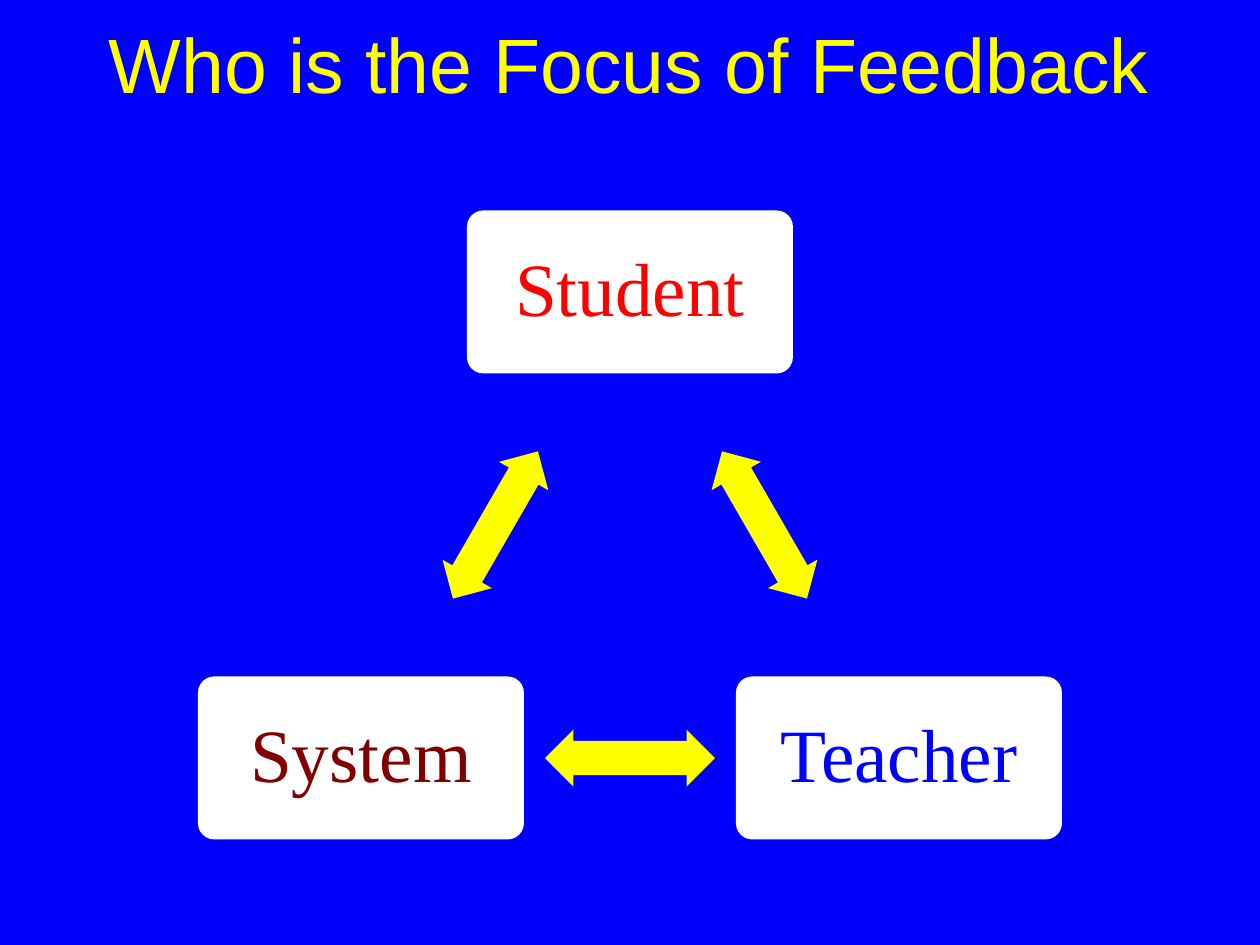
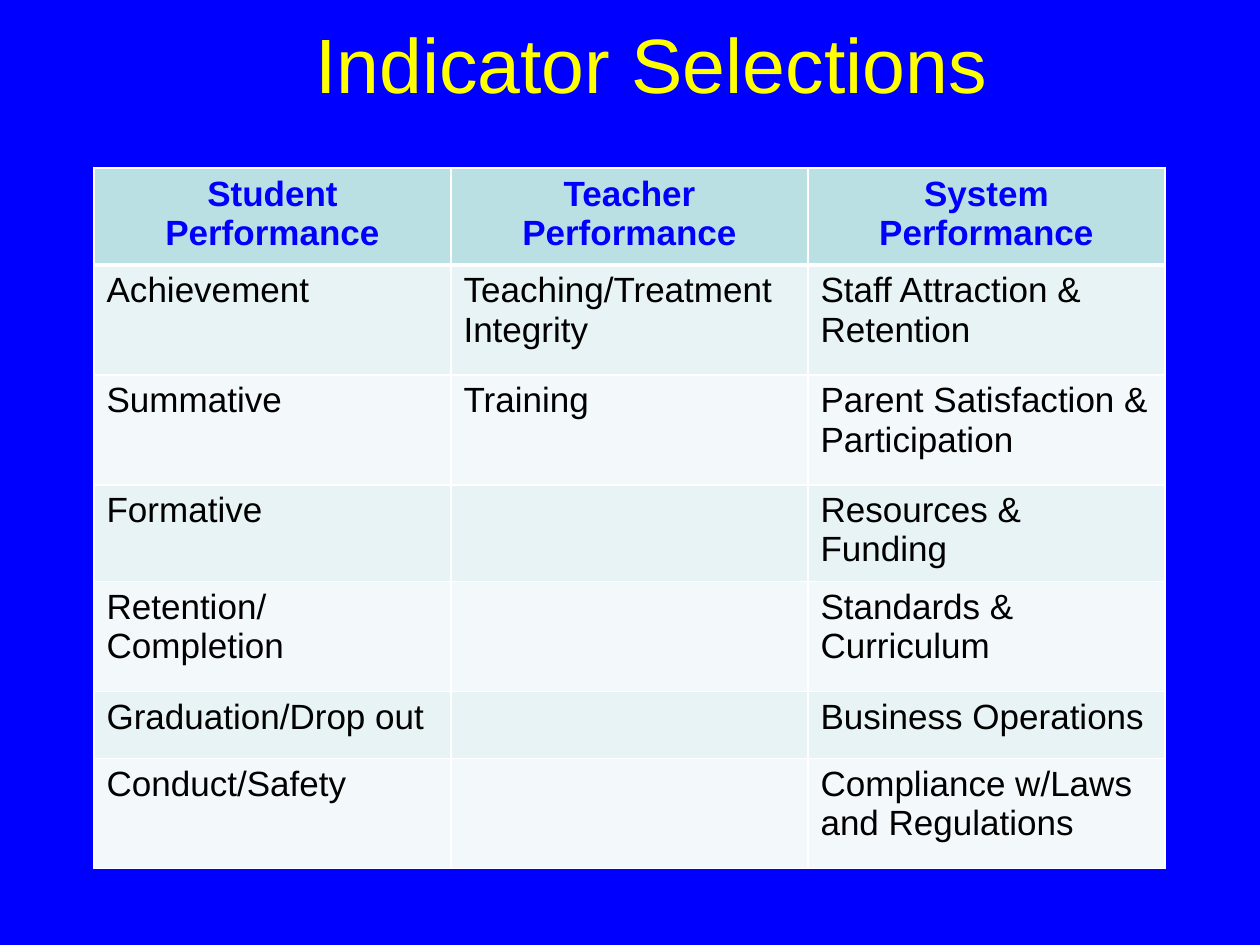
"""Build two slides on feedback focus and indicator selection."""
import itertools
import math
from typing import NamedTuple

import pptx
import pptx.dml.color
import pptx.enum.shapes
import pptx.enum.text
import pptx.oxml
import pptx.oxml.ns
import pptx.util

COLORS = {
    "background": "0000FF",
    "title": "FFFF00",
    "box": "FFFFFF",
    "arrow": "FFFF00",
    "student": "FF0000",
    "teacher": "0000FF",
    "system": "800000",
    "border": "FFFFFF",
    "header": "BBE0E3",
    "header_text": "0000FF",
    "odd_row": "E7F3F4",
    "even_row": "F3F9FA",
    "body_text": "000000",
}
PX_PER_INCH = 126
BOX_W, BOX_H = 326, 163
ARROW_W, ARROW_H = 170, 57
PP_ALIGN = pptx.enum.text.PP_ALIGN
MIDDLE = pptx.enum.text.MSO_ANCHOR.MIDDLE
MSO_SHAPE = pptx.enum.shapes.MSO_SHAPE


class Focus(NamedTuple):
    """A party that receives feedback, placed by its centre."""

    label: str
    color: str
    x: int
    y: int


class Row(NamedTuple):
    """A table row with its height."""

    height: int
    cells: tuple[str, str, str]


FOCUSES = (
    Focus("Student", "student", 630, 292),
    Focus("Teacher", "teacher", 899, 758),
    Focus("System", "system", 361, 758),
)
ROWS = (
    Row(97, ("Student Performance", "Teacher Performance", "System Performance")),
    Row(110, ("Achievement", "Teaching/Treatment Integrity", "Staff Attraction & Retention")),
    Row(110, ("Summative", "Training", "Parent Satisfaction & Participation")),
    Row(96, ("Formative", "", "Resources & Funding")),
    Row(110, ("Retention/Completion", "", "Standards & Curriculum")),
    Row(67, ("Graduation/Drop out", "", "Business Operations")),
    Row(110, ("Conduct/Safety", "", "Compliance w/Laws and Regulations")),
)


def px(n: float) -> pptx.util.Emu:
    """Turn px into EMU."""
    return pptx.util.Emu(round(n * 914400 / PX_PER_INCH))


def rgb(name: str) -> pptx.dml.color.RGBColor:
    """Look up a named colour."""
    return pptx.dml.color.RGBColor.from_string(COLORS[name])


def write(tf, text: str, size: int, color: str, font: str = "Arial",
          align=PP_ALIGN.CENTER, bold: bool = False) -> None:
    """Set and format the text of a frame."""
    tf.text = text
    tf.word_wrap = True
    for p in tf.paragraphs:
        p.alignment = align
        for r in p.runs:
            r.font.size = pptx.util.Pt(size)
            r.font.name = font
            r.font.bold = bold
            r.font.color.rgb = rgb(color)


def add_slide(prs, title: str, left: int):
    """Add a coloured slide with its title."""
    s = prs.slides.add_slide(prs.slide_layouts[6])
    s.background.fill.solid()
    s.background.fill.fore_color.rgb = rgb("background")
    tf = s.shapes.add_textbox(px(left), 0, px(1071), px(126)).text_frame
    write(tf, title, 44, "title")
    tf.vertical_anchor = MIDDLE
    return s


def add_centred(s, kind, x: float, y: float, w: int, h: int, color: str):
    """Add a plain filled shape around a centre."""
    sp = s.shapes.add_shape(kind, px(x - w / 2), px(y - h / 2), px(w), px(h))
    sp.shadow.inherit = False
    sp.fill.solid()
    sp.fill.fore_color.rgb = rgb(color)
    sp.line.fill.background()
    return sp


def add_box(s, focus: Focus) -> None:
    """Add the labelled box of a focus."""
    sp = add_centred(s, MSO_SHAPE.ROUNDED_RECTANGLE, focus.x, focus.y, BOX_W, BOX_H, "box")
    sp.adjustments[0] = 0.1
    tf = sp.text_frame
    write(tf, focus.label, 43, focus.color, "Times New Roman")
    tf.vertical_anchor = MIDDLE
    tf.margin_left = tf.margin_right = tf.margin_top = tf.margin_bottom = px(23)
    tf.paragraphs[0].line_spacing = 0.9


def add_arrow(s, a: Focus, b: Focus) -> None:
    """Add a double arrow midway between two focuses."""
    sp = add_centred(s, MSO_SHAPE.LEFT_RIGHT_ARROW, (a.x + b.x) / 2, (a.y + b.y) / 2,
                     ARROW_W, ARROW_H, "arrow")
    sp.adjustments[0], sp.adjustments[1] = 0.6, 0.5
    sp.rotation = round(math.degrees(math.atan2(b.y - a.y, b.x - a.x))) % 360


def set_border(cell, side: str, points: int) -> None:
    """Draw one border of a cell."""
    tc_pr = cell._tc.get_or_add_tcPr()
    tc_pr.append(pptx.oxml.parse_xml(
        f'<a:ln{side} {pptx.oxml.ns.nsdecls("a")} w="{pptx.util.Pt(points)}">'
        f'<a:solidFill><a:srgbClr val="{COLORS["border"]}"/></a:solidFill></a:ln{side}>'))


def add_indicator_table(s) -> None:
    """Add the table of indicators."""
    height = sum(row.height for row in ROWS)
    table = s.shapes.add_table(len(ROWS), 3, px(94), px(168), px(1071), px(height)).table
    for column in table.columns:
        column.width = px(357)
    for i, row in enumerate(ROWS):
        table.rows[i].height = px(row.height)
        header = i == 0
        fill = "header" if header else "odd_row" if i % 2 else "even_row"
        for j, text in enumerate(row.cells):
            cell = table.cell(i, j)
            write(cell.text_frame, text, 20, "header_text" if header else "body_text",
                  align=PP_ALIGN.CENTER if header else PP_ALIGN.LEFT, bold=header)
            for side in "LRTB":
                thick = (i, side) in ((0, "B"), (1, "T"))
                set_border(cell, side, 3 if thick else 1)
            cell.fill.solid()
            cell.fill.fore_color.rgb = rgb(fill)


def main() -> None:
    """Build and save the slides."""
    prs = pptx.Presentation()
    prs.slide_width, prs.slide_height = px(1260), px(945)

    s = add_slide(prs, "Who is the Focus of Feedback", 94)
    for focus in FOCUSES:
        add_box(s, focus)
    for a, b in itertools.pairwise((*FOCUSES, FOCUSES[0])):
        add_arrow(s, a, b)

    s = add_slide(prs, "Indicator Selections", 116)
    add_indicator_table(s)

    prs.save("out.pptx")


if __name__ == "__main__":
    main()
